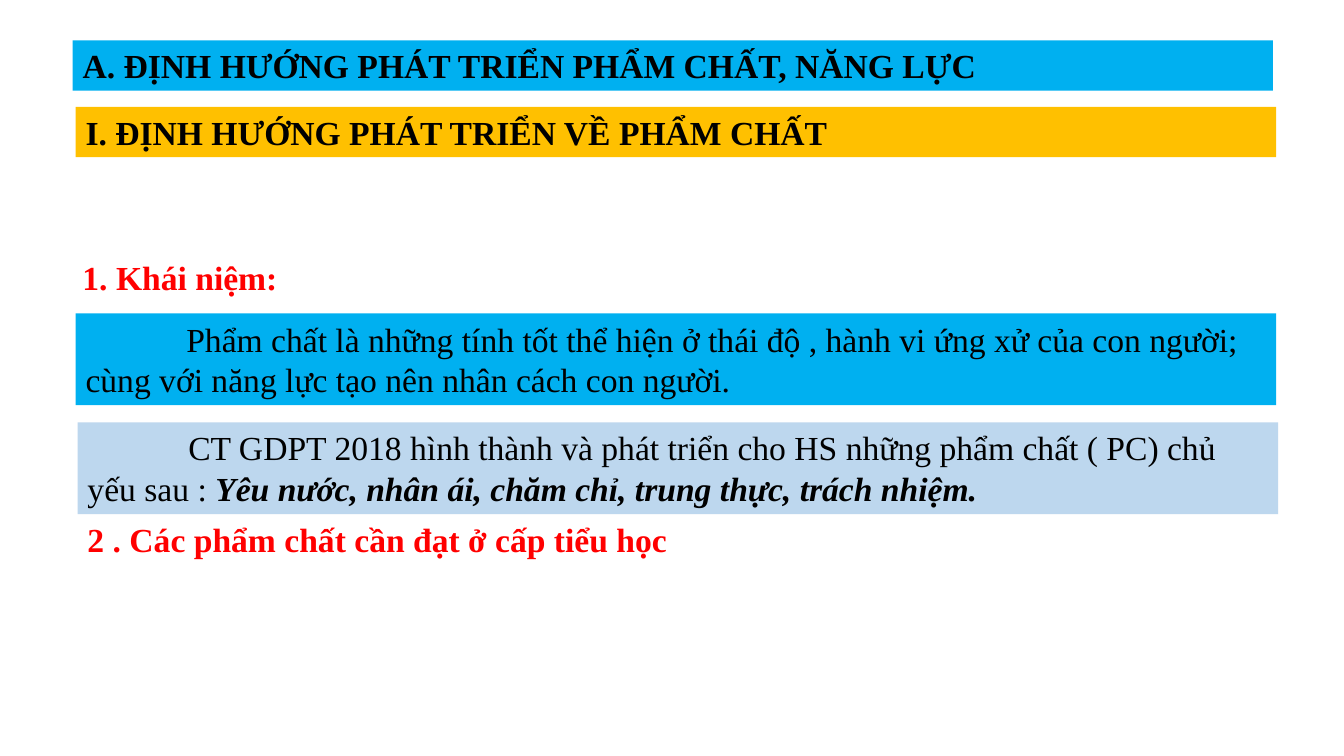
from pptx import Presentation
from pptx.dml.color import RGBColor
from pptx.enum.text import MSO_ANCHOR, MSO_AUTO_SIZE, PP_ALIGN
from pptx.util import Pt

BLACK = RGBColor(0x00, 0x00, 0x00)
RED = RGBColor(0xFF, 0x00, 0x00)
BLUE = RGBColor(0x00, 0xB0, 0xF0)
GOLD = RGBColor(0xFF, 0xC0, 0x00)
PALE_BLUE = RGBColor(0xBD, 0xD7, 0xEE)
TOP = MSO_ANCHOR.TOP
NO_AUTO_SIZE = MSO_AUTO_SIZE.NONE
LEFT = PP_ALIGN.LEFT

FONT_NAME = "Times New Roman"
BAND_WIDTH = 857.5
LINE_HEIGHT = 36
TWO_LINE_HEIGHT = 65.5
FIRST_LINE_INDENT = Pt(72)


def place(shape, left, top, width, height, fill):
    shape.left, shape.top = Pt(left), Pt(top)
    shape.width, shape.height = Pt(width), Pt(height)
    if fill is not None:
        shape.fill.solid()
        shape.fill.fore_color.rgb = fill


def write(shape, parts, color, indent):
    text_frame = shape.text_frame
    text_frame.word_wrap = True
    text_frame.auto_size = NO_AUTO_SIZE
    text_frame.vertical_anchor = TOP
    paragraph = text_frame.paragraphs[0]
    paragraph.alignment = LEFT
    paragraph.line_spacing = 1.0
    if indent:
        paragraph._p.get_or_add_pPr().set("indent", str(indent))
    for text, bold, italic in parts:
        run = paragraph.add_run()
        run.text = text
        run.font.name = FONT_NAME
        run.font.size = Pt(24)
        run.font.bold = bold
        run.font.italic = italic
        run.font.color.rgb = color


presentation = Presentation()
presentation.slide_width = Pt(960)
presentation.slide_height = Pt(540)
slide = presentation.slides.add_slide(presentation.slide_layouts[5])

title = slide.shapes.title
place(title, 51.8, 28.8, BAND_WIDTH, LINE_HEIGHT, BLUE)
write(title, [("A. ĐỊNH HƯỚNG PHÁT TRIỂN PHẨM CHẤT, NĂNG LỰC", True, False)], BLACK, 0)

blocks = [
    (54, 76.3, BAND_WIDTH, LINE_HEIGHT, GOLD, BLACK, 0,
     [("I. ĐỊNH HƯỚNG PHÁT TRIỂN VỀ PHẨM CHẤT", True, False)]),
    (51.8, 180, 207.4, LINE_HEIGHT, None, RED, 0,
     [("1. Khái niệm:", True, False)]),
    (54, 223.9, BAND_WIDTH, TWO_LINE_HEIGHT, BLUE, BLACK, FIRST_LINE_INDENT,
     [("Phẩm chất là những tính tốt thể hiện ở thái độ , hành vi ứng xử của con người; "
       "cùng với năng lực tạo nên nhân cách con người.", False, False)]),
    (55.4, 301.7, BAND_WIDTH, TWO_LINE_HEIGHT, PALE_BLUE, BLACK, FIRST_LINE_INDENT,
     [("CT GDPT 2018 hình thành và phát triển cho HS những phẩm chất ( PC) chủ yếu sau : ",
       False, False),
      ("Yêu nước, nhân ái, chăm chỉ, trung thực, trách nhiệm.", True, True)]),
    (55.4, 367.2, 622.8, LINE_HEIGHT, None, RED, 0,
     [("2 . Các phẩm chất cần đạt ở cấp tiểu học", True, False)]),
]
for left, top, width, height, fill, color, indent, parts in blocks:
    text_box = slide.shapes.add_textbox(0, 0, 0, 0)
    place(text_box, left, top, width, height, fill)
    write(text_box, parts, color, indent)

presentation.save("out.pptx")
